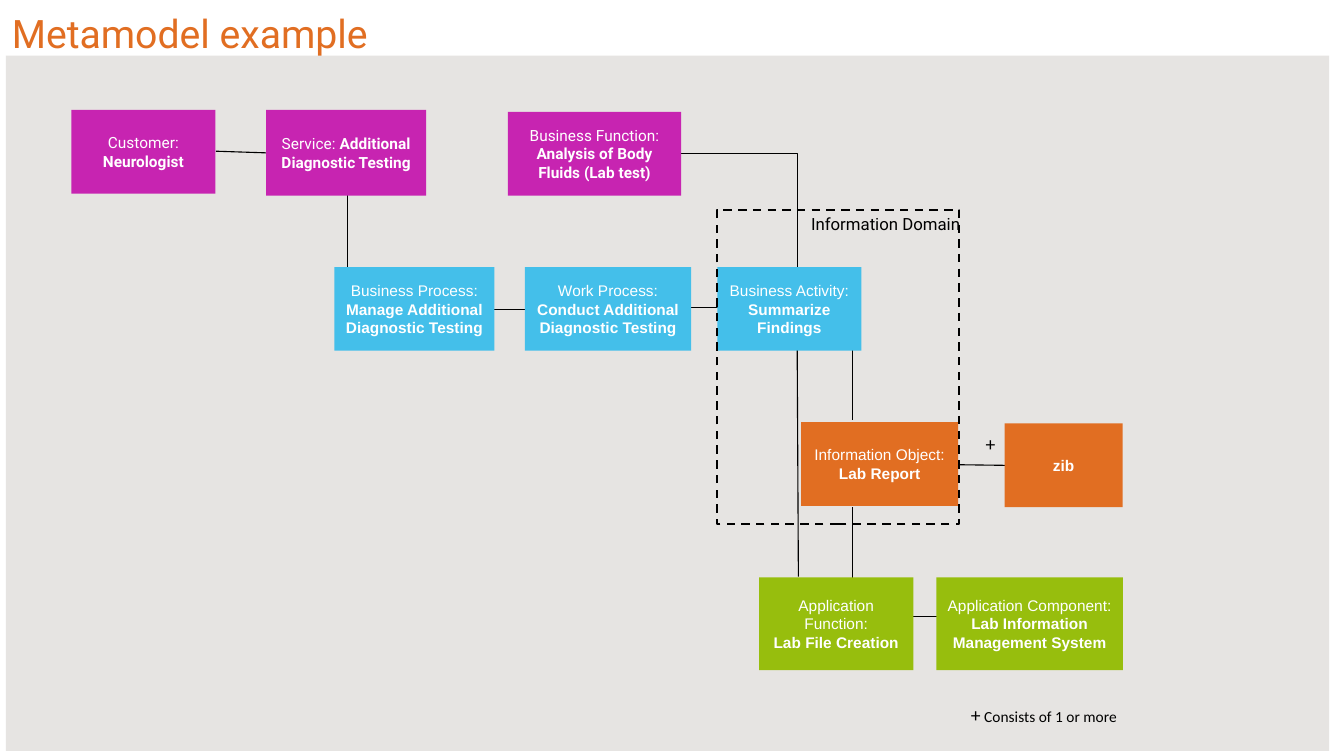
from dataclasses import dataclass
from pptx import Presentation, util as u
from pptx.dml.color import RGBColor
from pptx.enum import dml, shapes, text
from pptx.oxml.ns import qn
from lxml import etree


@dataclass(frozen=True)
class Theme:
    panel: str = "E6E4E2"
    business: str = "C724B1"
    process: str = "44BFEA"
    information: str = "E16E22"
    application: str = "97BE0D"
    ink: str = "000000"
    light: str = "FFFFFF"
    title_size: int = 28
    symbol_size: int = 14
    domain_size: int = 12
    body_size: int = 11
    thin: float = 0.79
    dashed: float = 1.5


THEME = Theme()
TITLE = "Metamodel example"
PANEL = (0.15, 1.4, 33.35, 17.52)  # left, top, width, height in cm
DOMAIN = (18.06, 5.3, 6.12, 7.9)

# Layers: colour, font, elements. An element is its place and its paragraphs,
# each a list of (words, bold).
LAYERS = [
    (THEME.business, "Roboto", [
        ((1.8, 2.77, 3.63, 2.11), [[("Customer:", False)], [("Neurologist", True)]]),
        ((6.71, 2.77, 4.03, 2.16), [[("Service:", False), (" Additional Diagnostic Testing", True)]]),
        ((12.8, 2.82, 4.37, 2.11), [[("Business Function:", False)],
                                    [("Analysis of Body Fluids (Lab test)", True)]]),
    ]),
    (THEME.process, "Arial", [
        ((8.43, 6.73, 4.03, 2.11), [[("Business Process: ", False),
                                     ("Manage Additional Diagnostic Testing", True)]]),
        ((13.23, 6.73, 4.19, 2.11), [[("Work Process: ", False),
                                      ("Conduct Additional Diagnostic Testing", True)]]),
        ((18.08, 6.73, 3.63, 2.11), [[("Business Activity:", False)], [("Summarize Findings", True)]]),
    ]),
    (THEME.information, "Arial", [
        ((20.19, 10.64, 3.96, 2.11), [[("Information Object:", False)], [("Lab Report", True)]]),
        ((25.32, 10.67, 2.97, 2.11), [[("zib", True)]]),
    ]),
    (THEME.application, "Arial", [
        ((19.13, 14.55, 3.89, 2.34), [[("Application Function:", False)], [("Lab File Creation", True)]]),
        ((23.6, 14.55, 4.7, 2.34), [[("Application Component:", False)],
                                    [("Lab Information Management System", True)]]),
    ]),
]

RELATIONS = [
    ((5.44, 3.81), (6.96, 3.86)),     # customer, service
    ((8.76, 4.9), (8.76, 6.73)),      # service, business process
    ((12.29, 7.8), (13.28, 7.8)),     # business process, work process
    ((16.89, 7.75), (18.36, 7.75)),   # work process, business activity
    ((20.09, 8.79), (20.12, 14.53)),  # business activity, application function
    ((21.49, 8.79), (21.49, 10.59)),  # business activity, information object
    ((21.49, 12.78), (21.49, 14.58)), # information object, application function
    ((24.13, 11.71), (25.65, 11.73)), # information object, zib
    ((22.58, 15.54), (24.13, 15.54)), # application function, component
]
FUNCTION_TO_ACTIVITY = [(17.12, 3.86), (20.09, 3.86), (20.09, 6.73)]

# Place, runs of (words, size), font, alignment, line spacing, wrap
LABELS = [
    ((24.59, 10.8, 0.76, 0.81), [("+", THEME.symbol_size)], "Calibri",
     text.PP_ALIGN.LEFT, 0.93, False),
    ((23.7, 17.65, 4.7, 0.81),
     [("+", THEME.symbol_size), (" Consists of 1 or more", THEME.body_size)], "Calibri",
     text.PP_ALIGN.RIGHT, 0.93, True),
    ((20.19, 5.26, 4.95, 0.76), [("Information Domain", THEME.domain_size)], "Roboto",
     text.PP_ALIGN.LEFT, 1.0, True),
]


def rgb(colour):
    return RGBColor.from_string(colour)


def cm(lengths):
    return [u.Cm(length) for length in lengths]


def style_run(run, font, size, colour, bold=False):
    run.font.name, run.font.size, run.font.bold = font, u.Pt(size), bold
    run.font.color.rgb = rgb(colour)


def style_line(line, width):
    line.color.rgb = rgb(THEME.ink)
    line.width = u.Pt(width)


def add_block(slide, place, fill=None):
    block = slide.shapes.add_shape(shapes.MSO_SHAPE.RECTANGLE, *cm(place))
    block.shadow.inherit = False
    block.line.fill.background()
    if fill:
        block.fill.solid()
        block.fill.fore_color.rgb = rgb(fill)
    else:
        block.fill.background()
    return block


def add_title(slide):
    title = slide.shapes.title
    title.left, title.top, title.width, title.height = cm((0.3, 0.3, 15.24, 0.86))
    frame = title.text_frame
    frame.text = TITLE
    frame.margin_left = frame.margin_right = frame.margin_bottom = 0
    frame.margin_top = u.Cm(0.05)
    frame.vertical_anchor = text.MSO_ANCHOR.TOP
    frame.auto_size = text.MSO_AUTO_SIZE.NONE
    heading = frame.paragraphs[0]
    heading.alignment, heading.line_spacing = text.PP_ALIGN.LEFT, 0.93
    style_run(heading.runs[0], "Roboto", THEME.title_size, THEME.information)


def add_relations(slide):
    for start, end in RELATIONS:
        relation = slide.shapes.add_connector(shapes.MSO_CONNECTOR.STRAIGHT, *cm(start + end))
        style_line(relation.line, THEME.thin)
        etree.SubElement(relation.element.spPr, qn("a:effectLst"))
    start, *corners = [cm(point) for point in FUNCTION_TO_ACTIVITY]
    builder = slide.shapes.build_freeform(*start)
    builder.add_line_segments(corners, close=False)
    elbow = builder.convert_to_shape()
    elbow.shadow.inherit = False
    elbow.fill.background()
    style_line(elbow.line, THEME.thin)


def add_element(slide, place, paragraphs, fill, font):
    frame = add_block(slide, place, fill).text_frame
    frame.word_wrap = True
    frame.vertical_anchor = text.MSO_ANCHOR.MIDDLE
    for index, pieces in enumerate(paragraphs):
        paragraph = frame.add_paragraph() if index else frame.paragraphs[0]
        paragraph.alignment = text.PP_ALIGN.CENTER
        for words, bold in pieces:
            run = paragraph.add_run()
            run.text = words
            style_run(run, font, THEME.body_size, THEME.light, bold)


def add_label(slide, place, pieces, font, alignment, spacing, wrap):
    frame = slide.shapes.add_textbox(*cm(place)).text_frame
    frame.word_wrap = wrap
    paragraph = frame.paragraphs[0]
    paragraph.alignment, paragraph.line_spacing = alignment, spacing
    for words, size in pieces:
        run = paragraph.add_run()
        run.text = words
        style_run(run, font, size, THEME.ink)


def main():
    deck = Presentation()
    deck.slide_width, deck.slide_height = cm((33.87, 19.05))
    slide = deck.slides.add_slide(deck.slide_layouts[5])
    add_block(slide, PANEL, THEME.panel)
    add_title(slide)
    add_relations(slide)
    for fill, font, elements in LAYERS:
        for place, paragraphs in elements:
            add_element(slide, place, paragraphs, fill, font)
    domain = add_block(slide, DOMAIN)
    style_line(domain.line, THEME.dashed)
    domain.line.dash_style = dml.MSO_LINE.DASH
    for label in LABELS:
        add_label(slide, *label)
    deck.save("out.pptx")


if __name__ == "__main__":
    main()
